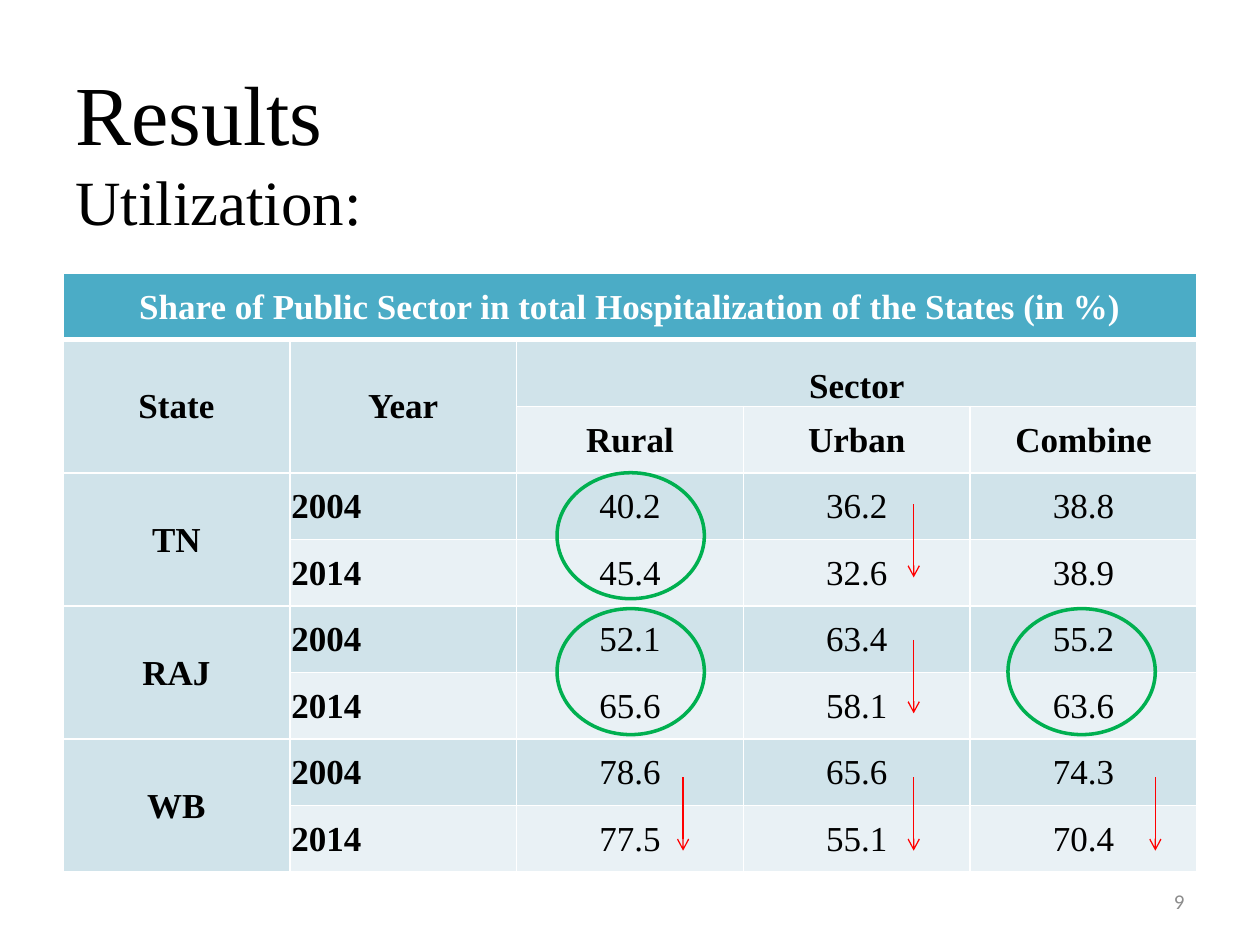
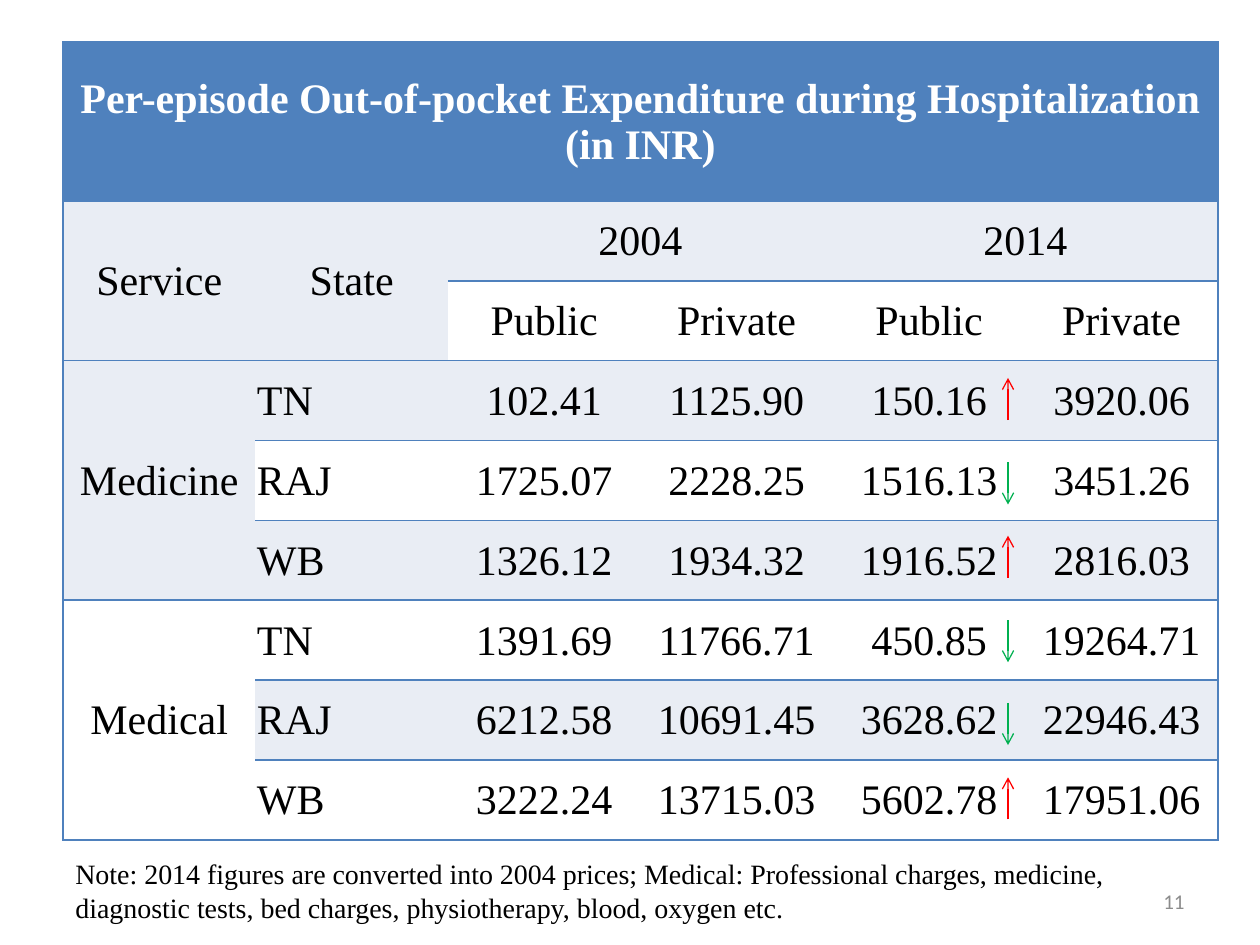
from itertools import product

from lxml import etree
from pptx import Presentation
from pptx import util as u
from pptx.dml.color import RGBColor
from pptx.enum import shapes, text
from pptx.oxml import ns

HUE = {"ink": "000000", "white": "FFFFFF", "gray": "8C8C8C", "red": "FF0000",
       "green": "00B050", "teal": "4BACC6", "mist": "D0E3EA", "pale": "E9F1F5",
       "blue": "4F81BD", "haze": "E9EDF4"}
SERIF, SANS = "Times New Roman", "Calibri"
ALIGN, ANCHOR = text.PP_ALIGN, text.MSO_ANCHOR
PAGE_BOX = (18.21, 17.65, 5.92, 1.02)
INSET = {"margin_left": u.Cm(.03), "margin_right": u.Cm(.03),
         "margin_top": u.Cm(.03), "margin_bottom": 0}

SHARE = {
    "box": (1.27, 5.51, 22.86, 12.07), "head": 1.34, "size": 20,
    "fills": ("teal", "mist", "pale"), "grid": True, "line": "white",
    "bold": lambda r, c: r < 3 or c < 2, "low": (1, 2),
    "spans": {(0, 0): (1, 5), (1, 0): (2, 1), (1, 1): (2, 1), (1, 2): (1, 3),
              (3, 0): (2, 1), (5, 0): (2, 1), (7, 0): (2, 1)},
    "rows": [
        ["Share of Public Sector in total Hospitalization of the States (in %)", "", "", "", ""],
        ["State", "Year", "Sector", "", ""],
        ["", "", "Rural", "Urban", "Combine"],
        ["TN", "2004", "40.2", "36.2", "38.8"],
        ["", "2014", "45.4", "32.6", "38.9"],
        ["RAJ", "2004", "52.1", "63.4", "55.2"],
        ["", "2014", "65.6", "58.1", "63.6"],
        ["WB", "2004", "78.6", "65.6", "74.3"],
        ["", "2014", "77.5", "55.1", "70.4"]]}

SPEND = {
    "box": (1.27, .85, 23.28, 16.08), "head": 3.2, "size": 24,
    "fills": ("blue", "haze", "white"), "grid": False, "line": "blue",
    "bold": lambda r, c: r == 0, "low": None,
    "spans": {(0, 0): (1, 6), (1, 0): (2, 1), (1, 1): (2, 1), (1, 2): (1, 2),
              (1, 4): (1, 2), (3, 0): (3, 1), (6, 0): (3, 1)},
    "rows": [
        ["Per-episode Out-of-pocket Expenditure during Hospitalization (in INR)", "", "", "", "", ""],
        ["Service", "State", "2004", "", "2014", ""],
        ["", "", "Public", "Private", "Public", "Private"],
        ["Medicine", "TN", "102.41", "1125.90", "150.16", "3920.06"],
        ["", "RAJ", "1725.07", "2228.25", "1516.13", "3451.26"],
        ["", "WB", "1326.12", "1934.32", "1916.52", "2816.03"],
        ["Medical", "TN", "1391.69", "11766.71", "450.85", "19264.71"],
        ["", "RAJ", "6212.58", "10691.45", "3628.62", "22946.43"],
        ["", "WB", "3222.24", "13715.03", "5602.78", "17951.06"]]}


def cm(*vals):
    """Turn numbers into lengths in centimetres."""
    return [u.Cm(v) for v in vals]


def rgb(name):
    """Look up a colour by name."""
    return RGBColor.from_string(HUE[name])


def apply(item, vals):
    """Set attributes of an item from a dict."""
    for key, val in vals.items():
        setattr(item, key, val)


def add_run(para, words, size, hue="ink", font=SERIF, bold=False):
    """Add a formatted run to a paragraph."""
    run = para.add_run()
    run.text = words
    apply(run.font, {"name": font, "size": u.Pt(size), "bold": bold})
    run.font.color.rgb = rgb(hue)


def add_text(slide, box, align=ALIGN.LEFT, anchor=ANCHOR.TOP):
    """Add a wrapped text box and return its first paragraph."""
    frame = slide.shapes.add_textbox(*cm(*box)).text_frame
    apply(frame, {"word_wrap": True, "vertical_anchor": anchor})
    para = frame.paragraphs[0]
    para.alignment = align
    return para


def add_page(slide, num):
    """Write the page number in the footer."""
    para = add_text(slide, PAGE_BOX, ALIGN.RIGHT, ANCHOR.MIDDLE)
    add_run(para, num, 12, "gray", SANS)


def add_title(slide, box, head, sub):
    """Write a title with a smaller second line."""
    para = add_text(slide, box, ALIGN.JUSTIFY, ANCHOR.MIDDLE)
    add_run(para, head, 48)
    para.add_line_break()
    add_run(para, sub, 36)


def add_arrow(slide, box, x, start, end, hue):
    """Draw an upright arrow at a place within the box."""
    left, top = box[:2]
    line = slide.shapes.add_connector(
        shapes.MSO_CONNECTOR.STRAIGHT,
        *cm(left + x, top + start, left + x, top + end))
    line.line.color.rgb = rgb(hue)
    line.line.width = u.Pt(.75)
    etree.SubElement(line.line._get_or_add_ln(), ns.qn("a:tailEnd"), type="arrow")
    etree.SubElement(line._element.spPr, ns.qn("a:effectLst"))


def add_ring(slide, box, x, y):
    """Circle a pair of values within the box."""
    ring = slide.shapes.add_shape(
        shapes.MSO_SHAPE.OVAL, *cm(box[0] + x, box[1] + y, 2.97, 2.54))
    ring.shadow.inherit = False
    ring.fill.background()
    ring.line.color.rgb = rgb("green")
    ring.line.width = u.Pt(2)


def set_edges(cell, edges):
    """Give a cell its four borders, where None means no line."""
    props = cell._tc.get_or_add_tcPr()
    for spot, side in enumerate("LRTB"):
        hue, width = edges[side] or (None, 1)
        line = etree.Element(ns.qn("a:ln" + side), w=str(u.Pt(width)))
        if hue:
            fill = etree.SubElement(line, ns.qn("a:solidFill"))
            etree.SubElement(fill, ns.qn("a:srgbClr"), val=HUE[hue])
        else:
            etree.SubElement(line, ns.qn("a:noFill"))
        props.insert(spot, line)


def find_edges(data, spot, area, cols):
    """Work out the borders of one cell in its merged area."""
    (r, c), (top, left, high, wide) = spot, area
    line, grid = (data["line"], 1), data["grid"]
    first = spot == (top, left)
    last_row, last_col = top + high, left + wide
    thick = (data["line"], 3) if grid else line
    return {
        "L": line if c == left and (grid or left == 0) else None,
        "R": line if (first or c + 1 == last_col) and (grid or last_col == cols) else None,
        "T": (thick if top == 1 else line) if r == top else None,
        "B": (thick if top == 0 else line) if first or r + 1 == last_row else None}


def fill_cell(cell, data, r, c):
    """Write and colour one cell."""
    cell.fill.solid()
    cell.fill.fore_color.rgb = rgb(data["fills"][0 if r == 0 else 2 - r % 2])
    apply(cell, INSET)
    low = (r, c) == data["low"]
    cell.vertical_anchor = ANCHOR.BOTTOM if low else ANCHOR.MIDDLE
    words = data["rows"][r][c]
    if words:
        para = cell.text_frame.paragraphs[0]
        para.alignment = ALIGN.LEFT if c == 1 and r > 2 else ALIGN.CENTER
        add_run(para, words, data["size"], "white" if r == 0 else "ink",
                bold=data["bold"](r, c))


def add_grid(slide, data):
    """Build a table with a merged header and banded rows."""
    rows, box = data["rows"], data["box"]
    high, wide = len(rows), len(rows[0])
    table = slide.shapes.add_table(high, wide, *cm(*box)).table
    apply(table, {"first_row": False, "horz_banding": False})
    for col in table.columns:
        col.width = u.Cm(box[2] / wide)
    for r, row in enumerate(table.rows):
        row.height = u.Cm((box[3] - data["head"]) / (high - 1) if r else data["head"])
    areas = {}
    for (r, c), (down, over) in data["spans"].items():
        table.cell(r, c).merge(table.cell(r + down - 1, c + over - 1))
        for i, j in product(range(down), range(over)):
            areas[r + i, c + j] = (r, c, down, over)
    for r, c in product(range(high), range(wide)):
        cell = table.cell(r, c)
        fill_cell(cell, data, r, c)
        area = areas.get((r, c), (r, c, 1, 1))
        set_edges(cell, find_edges(data, (r, c), area, wide))


def share_slide(slide):
    """Show the public share of hospital stays."""
    box = SHARE["box"]
    add_title(slide, (1.27, .76, 22.86, 4.52), "Results", "Utilization:")
    add_grid(slide, SHARE)
    add_page(slide, "9")
    for x, y in [(22.02, 10.16), (17.15, 10.16), (12.5, 10.16), (17.15, 7.39), (17.15, 4.65)]:
        add_arrow(slide, box, x, y, y + 1.48, "red")
    for x, y in [(19.05, 6.76), (9.96, 6.76), (9.96, 4.02)]:
        add_ring(slide, box, x, y)


def spend_slide(slide):
    """Show the spending per hospital stay."""
    box, size = SPEND["box"], .85
    add_grid(slide, SPEND)
    add_page(slide, "11")
    for y in (6.77, 9.95, 14.82):
        add_arrow(slide, box, 19.05, y + size, y, "red")
    for y in (8.47, 11.65, 13.32):
        add_arrow(slide, box, 19.05, y, y + size, "green")
    note = add_text(slide, (1.27, 17.15, 22.02, 1.63))
    add_run(note, "Note: 2014 figures are converted into 2004 prices; Medical: "
            "Professional charges, medicine, diagnostic tests, bed charges, "
            "physiotherapy, blood, oxygen etc.", 16)


def main():
    """Build and save the deck."""
    deck = Presentation()
    apply(deck, {"slide_width": u.Cm(25.4), "slide_height": u.Cm(19.05)})
    for build in (share_slide, spend_slide):
        build(deck.slides.add_slide(deck.slide_layouts[6]))
    deck.save("out.pptx")


if __name__ == "__main__":
    main()
